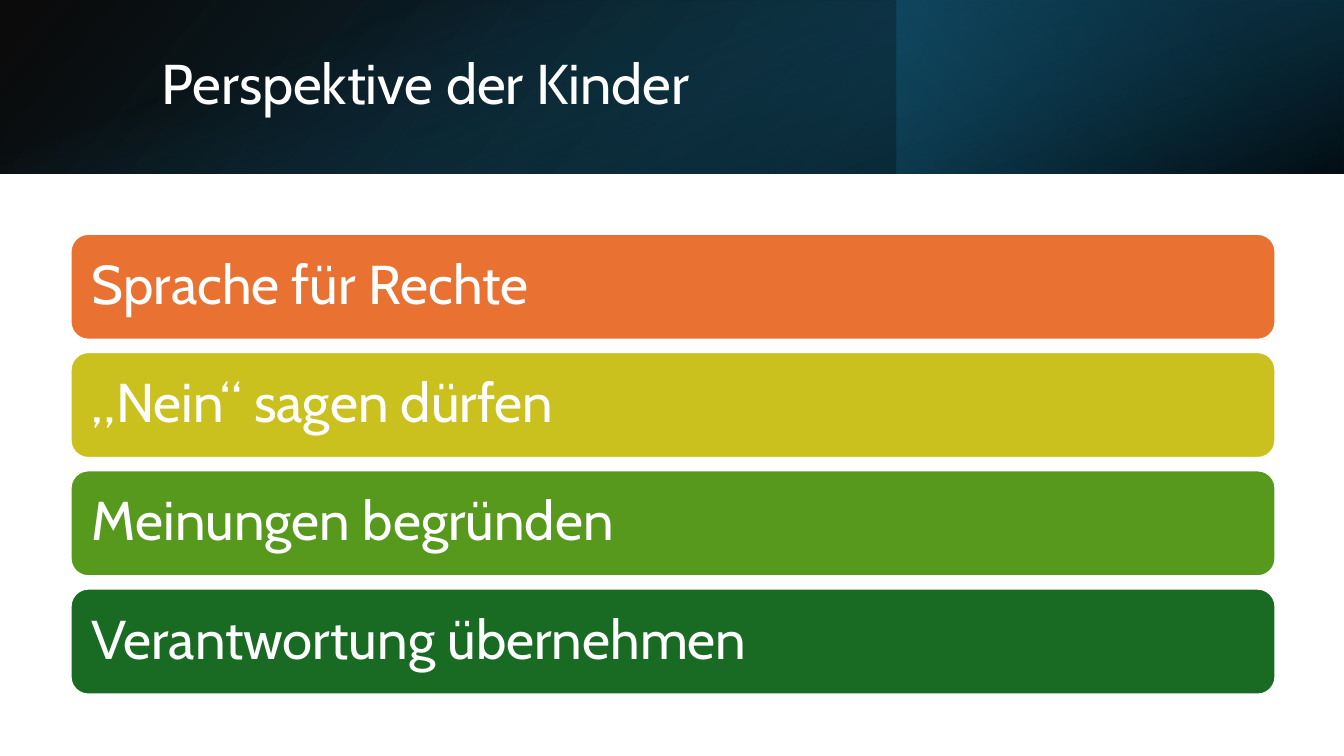
import pptx
import pptx.dml.color
import pptx.enum.shapes
import pptx.enum.text
import pptx.oxml.ns
import pptx.util

Inches = pptx.util.Inches
SHAPE = pptx.enum.shapes.MSO_SHAPE


def color(value):
    return pptx.dml.color.RGBColor.from_string(value)


class SlideBuilder:
    font = "Cabin"
    white = "FFFFFF"

    def __init__(self, slide):
        self.slide = slide

    def shape(self, kind, box):
        sp = self.slide.shapes.add_shape(kind, *map(Inches, box))
        sp.shadow.inherit = False
        return sp

    def gradient(self, box, stops, angle, rotation=0, flip=False):
        """Stops are (position, color, opacity) in percent; angle is clockwise."""
        sp = self.shape(SHAPE.RECTANGLE, box)
        sp.line.fill.background()
        sp.rotation = rotation
        if flip:
            sp._element.spPr.xfrm.set("flipH", "1")
        sp.fill.gradient()
        sp.fill.gradient_angle = 360 - angle
        for stop, (position, value, _) in zip(sp.fill.gradient_stops, stops):
            stop.position = position / 100
            stop.color.rgb = color(value)
        clrs = sp._element.spPr.iter(pptx.oxml.ns.qn("a:srgbClr"))
        for clr, (_, _, opacity) in zip(list(clrs), stops):
            alpha = clr.makeelement(pptx.oxml.ns.qn("a:alpha"), {"val": str(opacity * 1000)})
            clr.append(alpha)

    def set_text(self, sp, text, size):
        tf = sp.text_frame
        tf.text = text
        tf.word_wrap = True
        tf.vertical_anchor = pptx.enum.text.MSO_ANCHOR.MIDDLE
        p = tf.paragraphs[0]
        p.alignment = pptx.enum.text.PP_ALIGN.LEFT
        p.line_spacing = 0.9
        r = p.runs[0]
        r.font.name = self.font
        r.font.size = pptx.util.Pt(size)
        r.font.color.rgb = color(self.white)

    def title(self, text, box):
        self.set_text(self.slide.shapes.add_textbox(*map(Inches, box)), text, 40)

    def bar(self, text, fill, box):
        sp = self.shape(SHAPE.ROUNDED_RECTANGLE, box)
        sp.fill.solid()
        sp.fill.fore_color.rgb = color(fill)
        sp.line.color.rgb = color(self.white)
        sp.line.width = pptx.util.Pt(1.5)
        tf = sp.text_frame
        tf.margin_left = tf.margin_right = Inches(0.16)
        tf.margin_top = tf.margin_bottom = Inches(0.16)
        self.set_text(sp, text, 39)


def main():
    prs = pptx.Presentation()
    prs.slide_width, prs.slide_height = Inches(13.33), Inches(7.5)
    s = SlideBuilder(prs.slides.add_slide(prs.slide_layouts[6]))

    # Header band: three layered gradients
    s.gradient((0, 0, 13.33, 1.72), [(0, "000000", 96), (100, "104862", 100)], 140, flip=True)
    s.gradient((8.89, 0, 4.44, 1.72), [(19, "0B3041", 68), (100, "156082", 79)], 320, rotation=180)
    s.gradient((5.8, -5.8, 1.72, 13.33), [(23, "156082", 0), (99, "000000", 74)], 340, rotation=90)
    s.title("Perspektive der Kinder", (1.5, 0.38, 10.98, 0.96))

    # Evenly spaced bars
    bars = [
        ("Sprache für Rechte", "E97132"),
        ("„Nein“ sagen dürfen", "CBC11E"),
        ("Meinungen begründen", "56991D"),
        ("Verantwortung übernehmen", "196B24"),
    ]
    first, last = 2.32, 5.84
    pitch = (last - first) / (len(bars) - 1)
    for i, (text, fill) in enumerate(bars):
        s.bar(text, fill, (0.7, first + i * pitch, 11.95, 1.05))

    prs.save("out.pptx")


if __name__ == "__main__":
    main()
